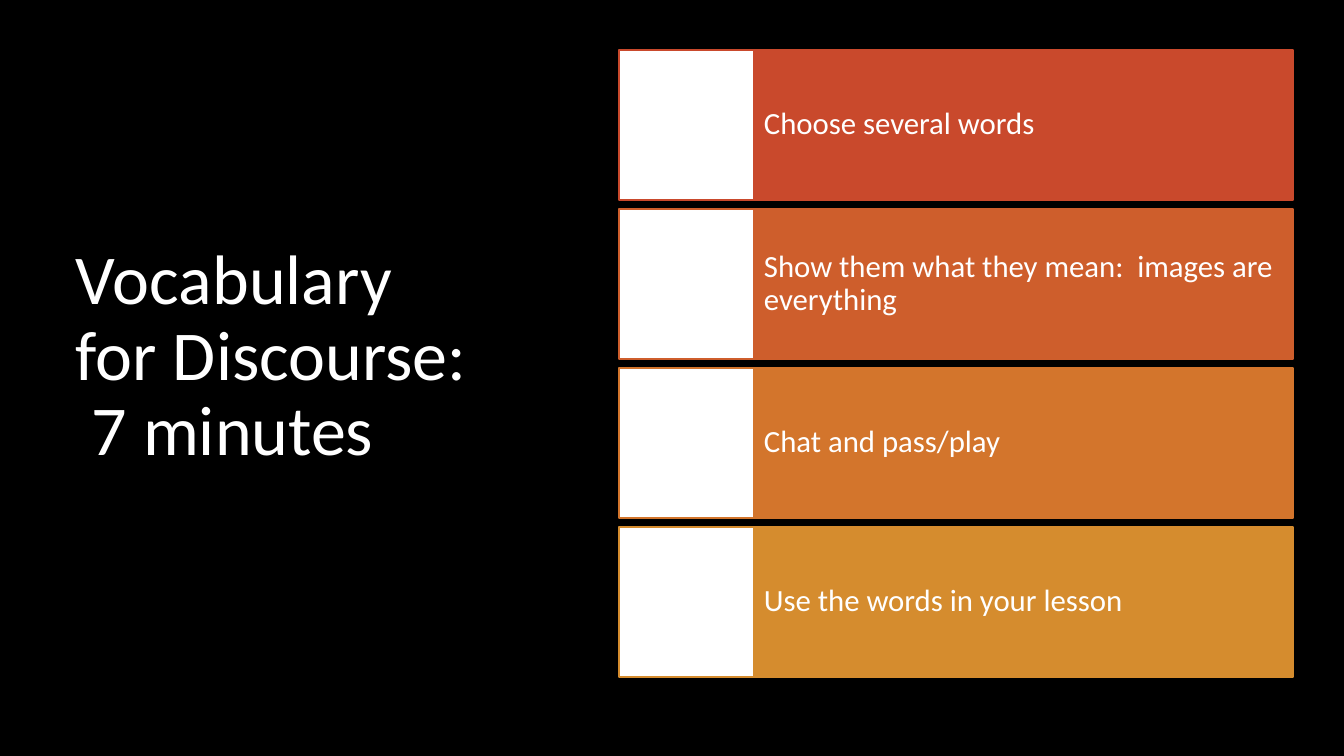
from pptx import Presentation
from pptx.dml.color import RGBColor
from pptx.enum.shapes import MSO_SHAPE
from pptx.enum.text import MSO_ANCHOR, MSO_AUTO_SIZE, PP_ALIGN
from pptx.util import Emu, Pt

RECT = MSO_SHAPE.RECTANGLE
MIDDLE = MSO_ANCHOR.MIDDLE
FIXED = MSO_AUTO_SIZE.NONE
LEFT = PP_ALIGN.LEFT
COLORS = {
    "black": "000000",
    "white": "FFFFFF",
    "red": "C9492C",
    "rust": "CE5E2C",
    "orange": "D3752C",
    "gold": "D58C2E",
}
STEPS = [
    ("Choose several words", "red"),
    ("Show them what they mean:  images are everything", "rust"),
    ("Chat and pass/play", "orange"),
    ("Use the words in your lesson", "gold"),
]


def px(count):
    return Emu(round(count * 914400 / 100.8))


def color(name):
    return RGBColor.from_string(COLORS[name])


def write(shape, text, size, font="Calibri", ink="white", pad=(10, 5)):
    frame = shape.text_frame
    frame.word_wrap = True
    frame.auto_size = FIXED
    frame.vertical_anchor = MIDDLE
    frame.margin_left = frame.margin_right = px(pad[0])
    frame.margin_top = frame.margin_bottom = px(pad[1])
    para = frame.paragraphs[0]
    para.text = text
    para.alignment = LEFT
    para.line_spacing = 0.9
    para.font.size = Pt(size)
    para.font.name = font
    para.font.color.rgb = color(ink)


class Deck:
    """Holds the style and the current slide."""

    def __init__(self):
        self.show = Presentation()
        self.show.slide_width = px(1344)
        self.show.slide_height = px(756)
        self.slide = self.show.slides.add_slide(self.show.slide_layouts[5])
        fill = self.slide.background.fill
        fill.solid()
        fill.fore_color.rgb = color("black")

    def title(self, text, left, top, width, height):
        shape = self.slide.shapes.title
        shape.left, shape.top = px(left), px(top)
        shape.width, shape.height = px(width), px(height)
        write(shape, text, 50)

    def box(self, left, top, width, height, fill, line):
        shape = self.slide.shapes.add_shape(
            RECT, px(left), px(top), px(width), px(height))
        shape.shadow.inherit = False
        shape.fill.solid()
        shape.fill.fore_color.rgb = color(fill)
        shape.line.color.rgb = color(line)
        shape.line.width = Pt(1)
        return shape

    def step(self, text, top, tint):
        bar = self.box(754, top, 539, 150, tint, tint)
        write(bar, text, 22, pad=(10, 38))
        self.box(619, top, 135, 150, "white", tint)


def main():
    deck = Deck()
    deck.title("Vocabulary\nfor Discourse:\n 7 minutes", 66, 133, 427, 449)
    for row, (text, tint) in enumerate(STEPS):
        deck.step(text, 50 + 159 * row, tint)
    deck.show.save("out.pptx")


if __name__ == "__main__":
    main()
